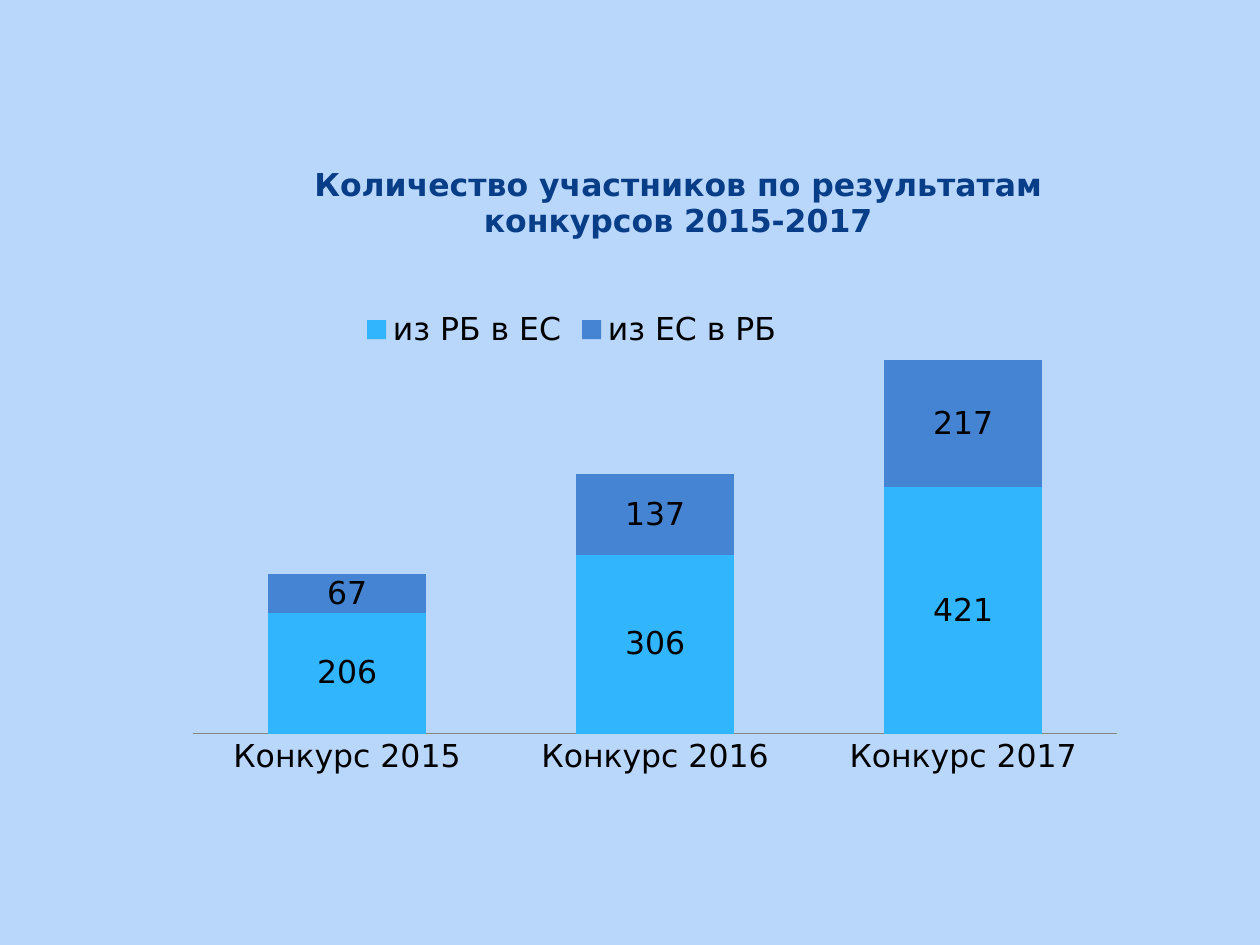
from pptx import Presentation
from pptx.chart.data import CategoryChartData
from pptx.dml.color import RGBColor
from pptx.enum.chart import (XL_CHART_TYPE, XL_LABEL_POSITION,
                             XL_LEGEND_POSITION, XL_TICK_MARK)
from pptx.oxml import parse_xml
from pptx.oxml.ns import nsdecls, qn
from pptx.util import Inches, Pt

BACKGROUND = RGBColor(0xB9, 0xD6, 0xFB)
TITLE_BLUE = RGBColor(0x07, 0x3E, 0x87)
BLACK = RGBColor(0, 0, 0)
AXIS_GRAY = RGBColor(0x86, 0x86, 0x86)
LIGHT_BLUE = RGBColor(0x31, 0xB6, 0xFD)
MID_BLUE = RGBColor(0x45, 0x84, 0xD3)

FONT = "DejaVu Sans"
TITLE = "Количество участников по результатам конкурсов 2015-2017"
CONTESTS = ["Конкурс 2015", "Конкурс 2016", "Конкурс 2017"]
PARTICIPANTS = [
    ("из РБ в ЕС", (206, 306, 421), LIGHT_BLUE),
    ("из ЕС в РБ", (67, 137, 217), MID_BLUE),
]


def style_font(font, color, bold=False):
    """Apply the shared typeface and size with the given colour."""
    font.name = FONT
    font.size = Pt(18)
    font.bold = bold
    font.color.rgb = color


def place(element, after=None, target=None, **fractions):
    """Give a chart part a manual layout in fractions of the chart."""
    for old in element.findall(qn("c:layout")):
        element.remove(old)
    target_tag = f'<c:layoutTarget val="{target}"/>' if target else ""
    modes = "".join(f'<c:{key}Mode val="edge"/>' for key in ("x", "y"))
    values = "".join(f'<c:{key} val="{value}"/>' for key, value in fractions.items())
    layout = parse_xml(
        f'<c:layout {nsdecls("c")}><c:manualLayout>{target_tag}{modes}{values}'
        "</c:manualLayout></c:layout>")
    if after:
        element.find(qn(after)).addnext(layout)
    else:
        element.insert(0, layout)


def add_title(chart):
    """Write the chart title."""
    frame = chart.chart_title.text_frame
    span = frame.paragraphs[0].add_run()
    span.text = TITLE
    style_font(span.font, TITLE_BLUE, bold=True)
    chart.chart_title.include_in_layout = False
    place(chart.chart_title._element, after="c:tx", x=0.14, y=0.02)


def add_legend(chart):
    """Show the legend above the columns."""
    chart.has_legend = True
    chart.legend.position = XL_LEGEND_POSITION.TOP
    chart.legend.include_in_layout = False
    style_font(chart.legend.font, BLACK)
    place(chart.legend._element, after="c:legendPos", x=0.19, y=0.25)


def style_axes(chart):
    """Keep only the category axis line and its labels."""
    categories = chart.category_axis
    categories.major_tick_mark = XL_TICK_MARK.NONE
    categories.format.line.color.rgb = AXIS_GRAY
    style_font(categories.tick_labels.font, BLACK)
    values = chart.value_axis
    values.visible = False
    values.has_major_gridlines = False
    values.minimum_scale = 0
    values.maximum_scale = 700


def style_columns(chart):
    """Colour the stacked columns and label their values."""
    plot = chart.plots[0]
    plot.gap_width = 95
    plot.overlap = 100
    plot.vary_by_categories = False
    for series, (_, _, color) in zip(plot.series, PARTICIPANTS):
        series.format.fill.solid()
        series.format.fill.fore_color.rgb = color
        labels = series.data_labels
        labels.show_value = True
        labels.position = XL_LABEL_POSITION.CENTER
        style_font(labels.font, BLACK)


def add_participants_chart(page):
    """Add the stacked column chart of participants per contest."""
    data = CategoryChartData()
    data.categories = CONTESTS
    for name, counts, _ in PARTICIPANTS:
        data.add_series(name, counts)
    chart = page.shapes.add_chart(
        XL_CHART_TYPE.COLUMN_STACKED, Inches(1.38), Inches(1.15),
        Inches(7.64), Inches(5.08), data).chart
    style_font(chart.font, BLACK)
    add_title(chart)
    add_legend(chart)
    style_axes(chart)
    style_columns(chart)
    place(chart._chartSpace.chart.plotArea, target="inner",
          x=0.02, y=0.28, w=0.96, h=0.64)


def main():
    """Build and save the deck."""
    deck = Presentation()
    deck.slide_width = Inches(10)
    deck.slide_height = Inches(7.5)
    page = deck.slides.add_slide(deck.slide_layouts[6])
    page.background.fill.solid()
    page.background.fill.fore_color.rgb = BACKGROUND
    add_participants_chart(page)
    deck.save("out.pptx")


if __name__ == "__main__":
    main()
